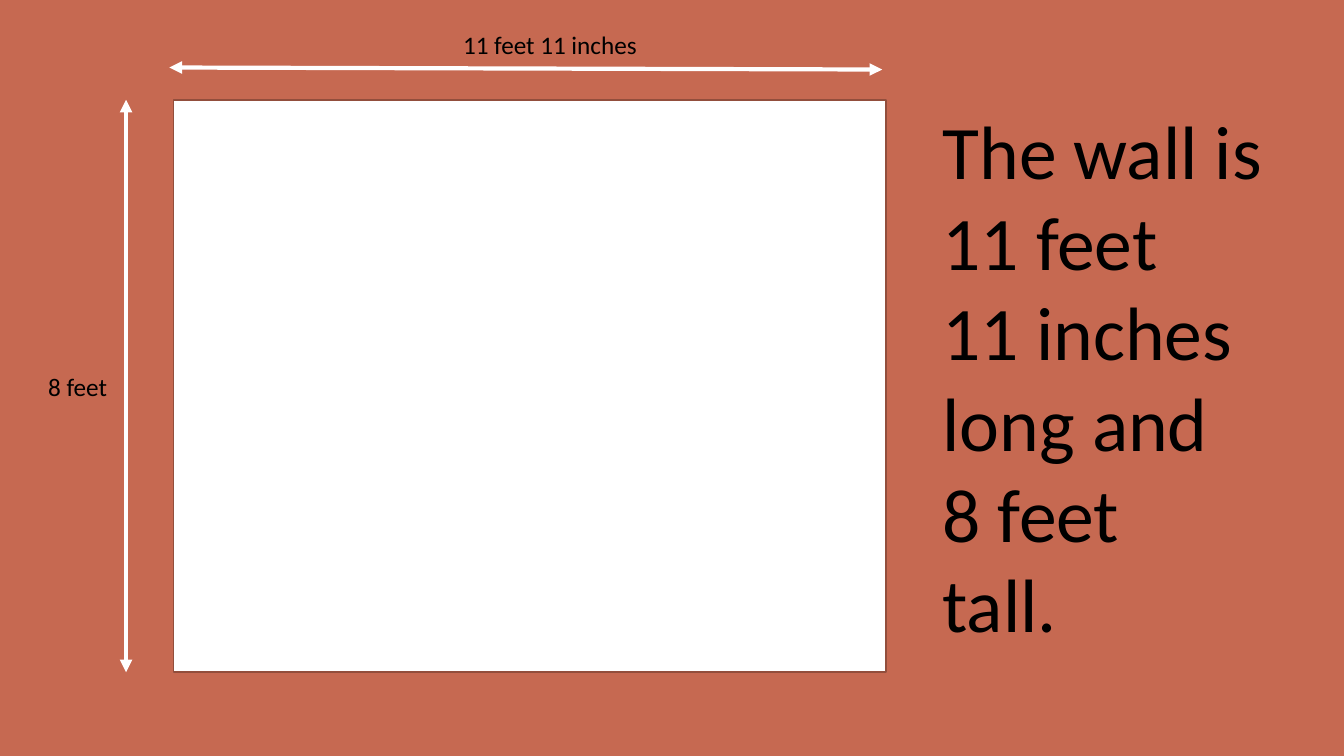
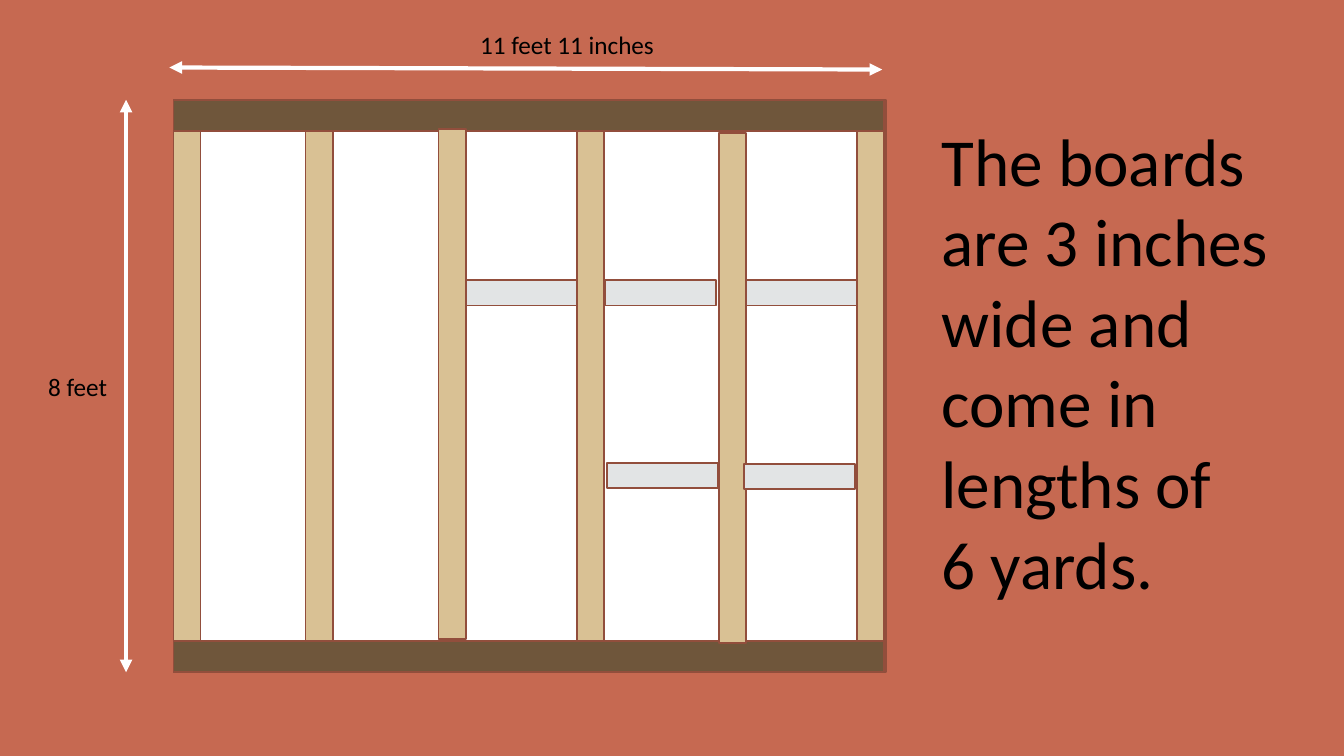
from dataclasses import dataclass

from lxml.etree import SubElement
from pptx import Presentation
from pptx.dml.color import RGBColor
from pptx.enum.shapes import MSO_CONNECTOR, MSO_SHAPE
from pptx.enum.text import MSO_AUTO_SIZE, PP_ALIGN
from pptx.oxml.ns import qn
from pptx.util import Emu, Pt

EMU_PER_PX = 9144  # 100 px to the inch


def px(length):
    return Emu(length * EMU_PER_PX)


@dataclass(frozen=True)
class Theme:
    font: str = "Calibri"
    background: str = "C66951"
    wall: str = "FFFFFF"
    outline: str = "924E3C"
    arrow: str = "FFFFFF"
    text: str = "000000"
    plate: str = "6F563B"
    stud: str = "D9C194"
    block: str = "E2E4E5"
    label_size: int = 18
    wall_statement_size: int = 54
    board_statement_size: int = 48
    outline_width: float = 1.25
    arrow_width: float = 3


class WallDeck:
    """Holds the style and the slide being drawn."""

    def __init__(self, theme):
        self.theme = theme
        self.slide = None
        self.presentation = Presentation()
        self.presentation.slide_width = px(1333)
        self.presentation.slide_height = px(750)

    def add_slide(self):
        blank_layout = self.presentation.slide_layouts[6]
        self.slide = self.presentation.slides.add_slide(blank_layout)
        fill = self.slide.background.fill
        fill.solid()
        fill.fore_color.rgb = RGBColor.from_string(self.theme.background)

    def board(self, left, top, width, height, color):
        shape = self.slide.shapes.add_shape(
            MSO_SHAPE.RECTANGLE, px(left), px(top), px(width), px(height))
        shape.shadow.inherit = False
        shape.fill.solid()
        shape.fill.fore_color.rgb = RGBColor.from_string(color)
        shape.line.color.rgb = RGBColor.from_string(self.theme.outline)
        shape.line.width = Pt(self.theme.outline_width)

    def text(self, left, top, width, height, lines, size, align=PP_ALIGN.LEFT):
        box = self.slide.shapes.add_textbox(
            px(left), px(top), px(width), px(height))
        frame = box.text_frame
        frame.text = "\n".join(lines)
        frame.word_wrap = True
        frame.auto_size = MSO_AUTO_SIZE.SHAPE_TO_FIT_TEXT
        font_format = {"name": self.theme.font, "size": Pt(size)}
        for paragraph in frame.paragraphs:
            paragraph.alignment = align
            font = paragraph.runs[0].font
            for name, value in font_format.items():
                setattr(font, name, value)
            font.color.rgb = RGBColor.from_string(self.theme.text)

    def dimension_arrow(self, start_x, start_y, end_x, end_y):
        connector = self.slide.shapes.add_connector(
            MSO_CONNECTOR.STRAIGHT,
            px(start_x), px(start_y), px(end_x), px(end_y))
        connector.line.color.rgb = RGBColor.from_string(self.theme.arrow)
        connector.line.width = Pt(self.theme.arrow_width)
        line = connector.line._get_or_add_ln()
        for end in ("a:headEnd", "a:tailEnd"):
            SubElement(line, qn(end), type="triangle")
        SubElement(connector._element.spPr, qn("a:effectLst"))

    def measured_wall(self, length_label_left):
        """Draw the bare wall with its length and height."""
        self.board(172, 99, 707, 568, self.theme.wall)
        self.dimension_arrow(168, 67, 875, 69)
        self.dimension_arrow(125, 99, 125, 667)
        size = self.theme.label_size
        self.text(length_label_left, 24, 195, 40, ["11 feet 11 inches"], size,
                  PP_ALIGN.CENTER)
        self.text(38, 363, 87, 40, ["8 feet"], size)


def build_wall_slide(deck):
    deck.add_slide()
    deck.measured_wall(length_label_left=448)
    deck.text(925, 98, 388, 555,
              ["The wall is 11 feet", "11 inches long and", "8 feet", "tall."],
              deck.theme.wall_statement_size)


def build_boards_slide(deck):
    theme = deck.theme
    deck.add_slide()
    deck.measured_wall(length_label_left=465)
    deck.text(924, 113, 388, 495,
              ["The boards are 3 inches wide and come in lengths of",
               "6 yards."],
              theme.board_statement_size)

    # Top and bottom plates
    for top in (99, 636):
        deck.board(172, top, 705, 31, theme.plate)

    # Upright studs: left, top
    for left, top in ((172, 130), (303, 130), (435, 128),
                      (572, 130), (713, 132), (850, 130)):
        deck.board(left, top, 27, 506, theme.stud)

    # Blocks between the studs: left, top
    for left, top in ((462, 278), (600, 278), (740, 278),
                      (602, 459), (738, 460)):
        deck.board(left, top, 110, 25, theme.block)


def main():
    deck = WallDeck(Theme())
    build_wall_slide(deck)
    build_boards_slide(deck)
    deck.presentation.save("out.pptx")


if __name__ == "__main__":
    main()
